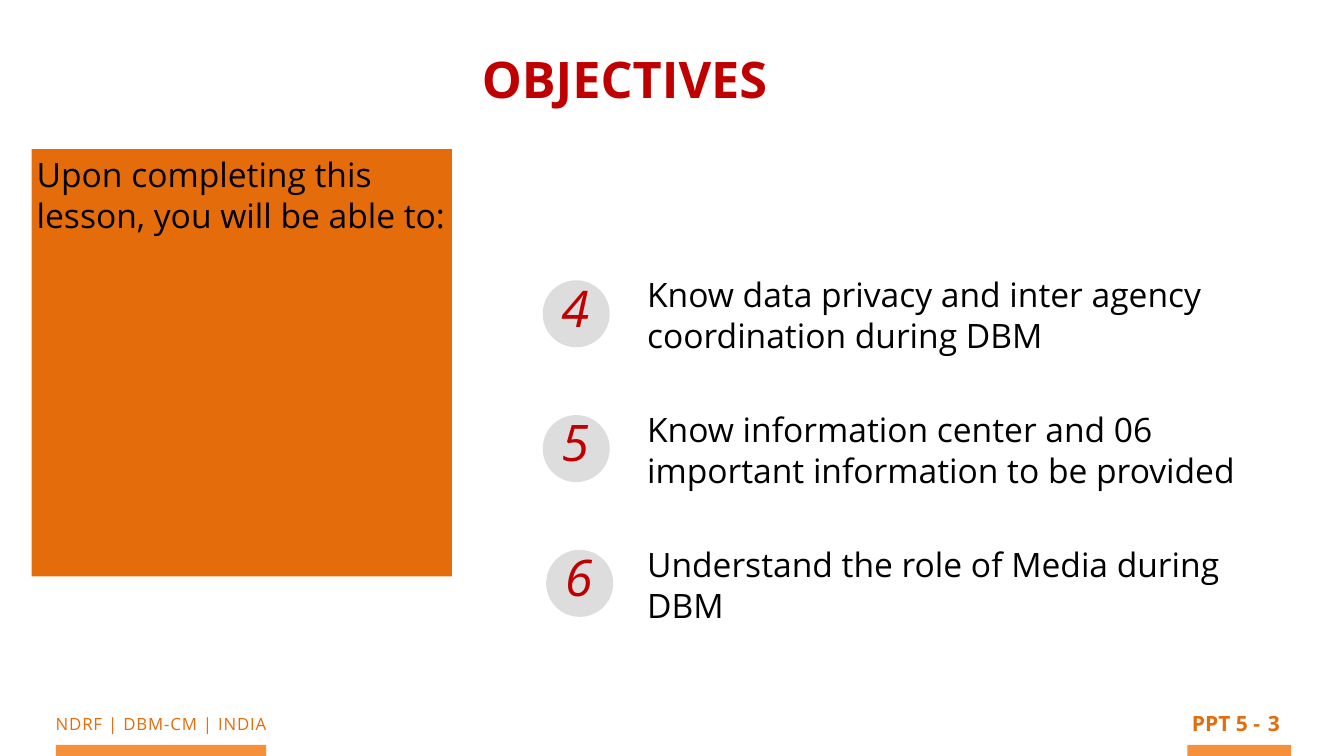
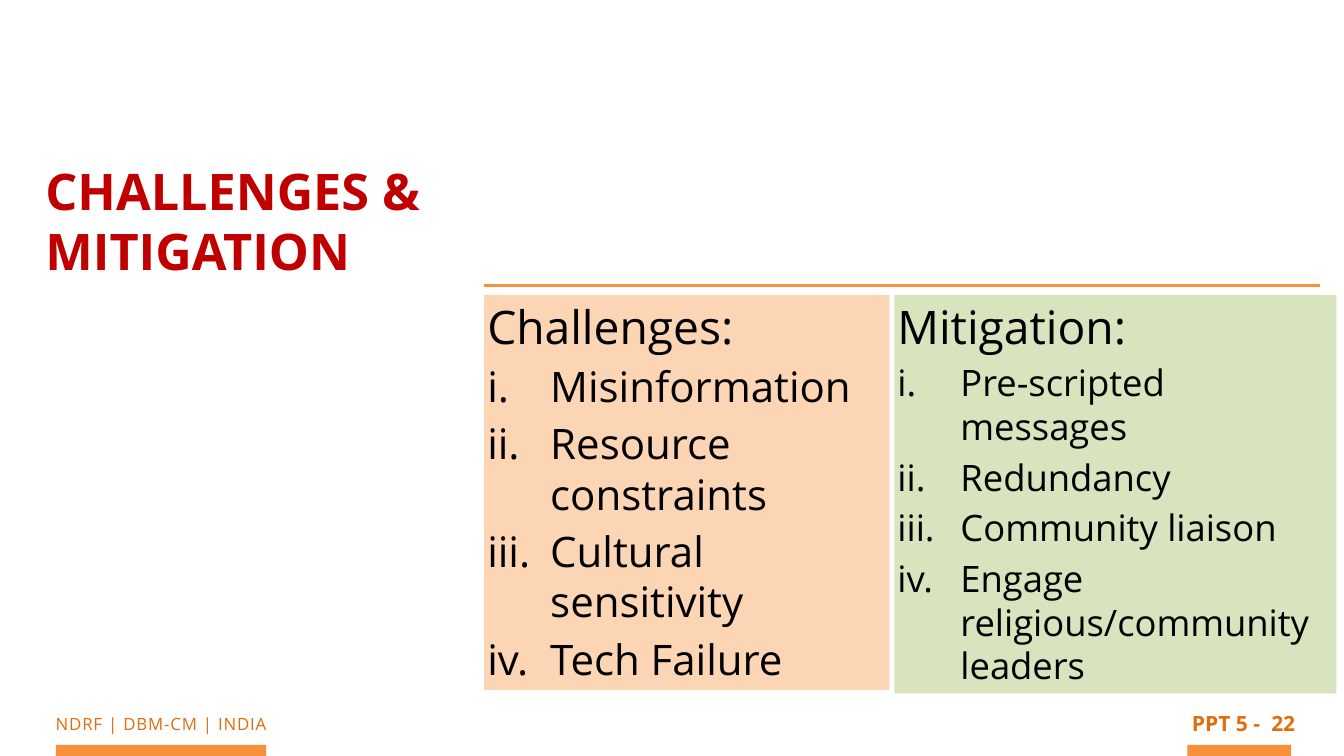
from dataclasses import dataclass

import pptx
import pptx.dml.color
import pptx.enum.shapes
import pptx.enum.text
import pptx.oxml.ns
import pptx.util
from lxml import etree

RGBColor = pptx.dml.color.RGBColor
ORANGE = RGBColor(0xE4, 0x6C, 0x0A)
BAND = RGBColor(0xF7, 0x90, 0x3B)
RULE = RGBColor(0xF6, 0x92, 0x40)
RED = RGBColor(0xC0, 0x00, 0x00)
BLACK = RGBColor(0x00, 0x00, 0x00)
GREY = RGBColor(0xDD, 0xDD, 0xDD)
PEACH = RGBColor(0xFC, 0xD5, 0xB5)
GREEN = RGBColor(0xD7, 0xE4, 0xBD)

FONT = "Open Sans"
WIDTH, HEIGHT = pptx.util.Inches(26.67), pptx.util.Inches(15)
MSO_SHAPE = pptx.enum.shapes.MSO_SHAPE
LEFT = pptx.enum.text.PP_ALIGN.LEFT
CENTER = pptx.enum.text.PP_ALIGN.CENTER
LIST_INDENT = pptx.util.Inches(1.25)


@dataclass(frozen=True)
class Box:
    """A rectangle in percent of the slide's width and height."""
    left: float
    top: float
    width: float
    height: float

    def emu(self) -> tuple[int, int, int, int]:
        return (across(self.left), down(self.top),
                across(self.width), down(self.height))


@dataclass(frozen=True)
class Style:
    size: float
    color: RGBColor = BLACK
    bold: bool = False
    italic: bool = False
    align: int = LEFT
    spacing: float = 0


@dataclass(frozen=True)
class Column:
    heading: str
    items: tuple[str, ...]
    item_size: float
    fill: RGBColor
    box: Box


@dataclass(frozen=True)
class Objective:
    number: int
    text: str
    left: float


TITLE = Style(72, RED, bold=True)
BODY = Style(48)
HEADING = Style(66)
NUMERAL = Style(72, RED, italic=True)
FOOTER = Style(24, ORANGE, align=CENTER, spacing=1.2)
PAGE = Style(30, ORANGE, bold=True, align=CENTER)

OBJECTIVES = (
    Objective(4, "Know data privacy and inter agency coordination during DBM", 40.38),
    Objective(5, "Know information center and 06 important information to be provided", 40.38),
    Objective(6, "Understand the role of Media during DBM", 40.64),
)
OBJECTIVE_TOP, OBJECTIVE_PITCH = 37.07, 17.83
OBJECTIVE_GAP = 77.6

COLUMNS = (
    Column("Challenges:",
           ("Misinformation", "Resource constraints", "Cultural sensitivity", "Tech Failure"),
           60, PEACH, Box(36.03, 39, 30.15, 52.27)),
    Column("Mitigation:",
           ("Pre-scripted messages", "Redundancy", "Community liaison",
            "Engage religious/community leaders"),
           52, GREEN, Box(66.55, 39, 32.88, 52.73)),
)


def across(percent: float) -> int:
    return round(WIDTH * percent / 100)


def down(percent: float) -> int:
    return round(HEIGHT * percent / 100)


def place(sp, box: Box) -> None:
    sp.left, sp.top, sp.width, sp.height = box.emu()


def set_frame(tf, inset: float = 0.09, wrap: bool = True) -> None:
    tf.word_wrap = wrap
    tf.auto_size = pptx.enum.text.MSO_AUTO_SIZE.NONE
    tf.vertical_anchor = pptx.enum.text.MSO_ANCHOR.TOP
    margin = pptx.util.Inches(inset)
    tf.margin_left = tf.margin_right = tf.margin_top = tf.margin_bottom = margin


def set_bullet(p, numbered: bool) -> None:
    """Give a paragraph a roman numeral with a hanging indent, or neither."""
    pPr = p._p.get_or_add_pPr()
    indent = LIST_INDENT if numbered else 0
    pPr.set("marL", str(indent))
    pPr.set("indent", str(-indent))
    qn = pptx.oxml.ns.qn
    if numbered:
        etree.SubElement(pPr, qn("a:buFont")).set("typeface", FONT)
        etree.SubElement(pPr, qn("a:buAutoNum")).set("type", "romanLcPeriod")
    else:
        etree.SubElement(pPr, qn("a:buNone"))


def format_paragraph(p, style: Style, before: float = 0) -> None:
    p.alignment = style.align
    p.space_before = pptx.util.Pt(before)
    for r in p.runs:
        r.font.name = FONT
        r.font.size = pptx.util.Pt(style.size)
        r.font.bold = style.bold
        r.font.italic = style.italic
        r.font.color.rgb = style.color
        if style.spacing:
            r._r.get_or_add_rPr().set("spc", str(round(style.spacing * 100)))


def add_text(shapes, box: Box, text: str, style: Style, wrap: bool = True) -> None:
    tf = shapes.add_textbox(*box.emu()).text_frame
    set_frame(tf, wrap=wrap)
    tf.text = text
    format_paragraph(tf.paragraphs[0], style)


def add_filled(shapes, kind, box: Box, color: RGBColor):
    sp = shapes.add_shape(kind, *box.emu())
    sp.shadow.inherit = False
    sp.fill.solid()
    sp.fill.fore_color.rgb = color
    sp.line.fill.background()
    return sp


def set_title(s, text: str, box: Box) -> None:
    sp = s.shapes.title
    place(sp, box)
    set_frame(sp.text_frame)
    sp.text_frame.text = text
    format_paragraph(sp.text_frame.paragraphs[0], TITLE)


def add_footer(s, page: int) -> None:
    add_text(s.shapes, Box(2.47, 93.87, 19.05, 3.87), "NDRF | DBM-CM | INDIA", FOOTER)
    add_text(s.shapes, Box(88.34, 93.4, 5.77, 4.53), "PPT 5 -", PAGE, wrap=False)
    page_width = 1.57 if page < 10 else 2.96
    add_text(s.shapes, Box(94, 93.4, page_width, 4.93), str(page), PAGE)
    for left, width in ((4.16, 15.64), (88.34, 7.72)):
        add_filled(s.shapes, MSO_SHAPE.RECTANGLE, Box(left, 98.53, width, 1.47), BAND)


def add_badge(s, number: int, left: float, top: float) -> None:
    shapes = s.shapes.add_group_shape().shapes
    add_filled(shapes, MSO_SHAPE.OVAL, Box(left, top, 4.99, 8.87), GREY)
    add_text(shapes, Box(left + 1.05, top - 1.07, 3.37, 12.27), str(number), NUMERAL)


def add_objectives_slide(prs) -> None:
    s = prs.slides.add_slide(prs.slide_layouts[1])
    set_title(s, "OBJECTIVES", Box(35.51, 5.73, 21.93, 10.2))
    panel = add_filled(s.shapes, MSO_SHAPE.RECTANGLE, Box(2.36, 19.73, 31.27, 56.53), ORANGE)
    set_frame(panel.text_frame, 0.1)
    panel.text_frame.text = "Upon completing this lesson, you will be able to:"
    format_paragraph(panel.text_frame.paragraphs[0], BODY)

    body = s.placeholders[1]
    place(body, Box(47.81, 35.67, 47.88, 48))
    set_frame(body.text_frame)
    body.text_frame.text = "\n".join(o.text for o in OBJECTIVES)
    for i, p in enumerate(body.text_frame.paragraphs):
        set_bullet(p, numbered=False)
        format_paragraph(p, BODY, OBJECTIVE_GAP if i else 0)
    for i, objective in enumerate(OBJECTIVES):
        add_badge(s, objective.number, objective.left, OBJECTIVE_TOP + i * OBJECTIVE_PITCH)
    add_footer(s, 3)


def fill_column(sp, column: Column) -> None:
    place(sp, column.box)
    sp.fill.solid()
    sp.fill.fore_color.rgb = column.fill
    tf = sp.text_frame
    set_frame(tf, 0.06)
    tf.text = "\n".join((column.heading, *column.items))
    for i, p in enumerate(tf.paragraphs):
        set_bullet(p, numbered=i > 0)
        format_paragraph(p, Style(column.item_size) if i else HEADING, 10 if i else 0)


def add_challenges_slide(prs) -> None:
    s = prs.slides.add_slide(prs.slide_layouts[3])
    set_title(s, "CHALLENGES & MITIGATION", Box(3.04, 20.53, 35.66, 17.33))
    for index, column in enumerate(COLUMNS, start=1):
        fill_column(s.placeholders[index], column)
    rule = s.shapes.add_connector(pptx.enum.shapes.MSO_CONNECTOR.STRAIGHT,
                                  across(36.03), down(37.8), across(98.2), down(37.8))
    rule.line.color.rgb = RULE
    rule.line.width = pptx.util.Pt(4.5)
    etree.SubElement(rule._element.spPr, pptx.oxml.ns.qn("a:effectLst"))
    add_footer(s, 22)


def main() -> None:
    prs = pptx.Presentation()
    prs.slide_width, prs.slide_height = WIDTH, HEIGHT
    add_objectives_slide(prs)
    add_challenges_slide(prs)
    prs.save("out.pptx")


if __name__ == "__main__":
    main()
